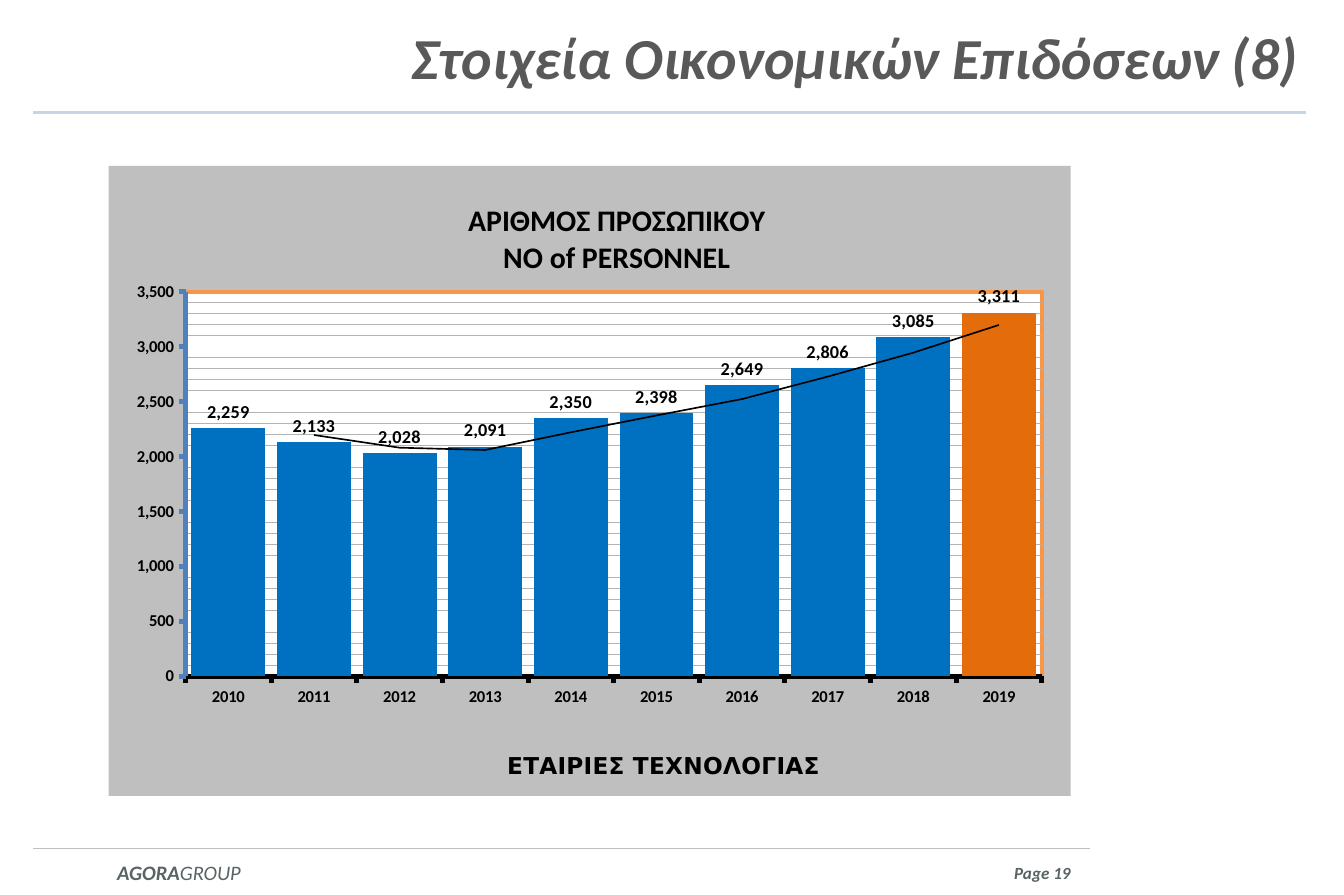
from lxml import etree
from pptx import Presentation
from pptx.chart.data import CategoryChartData
from pptx.dml.color import RGBColor
from pptx.enum.chart import XL_CHART_TYPE, XL_LABEL_POSITION, XL_TICK_MARK
from pptx.enum.shapes import MSO_CONNECTOR
from pptx.enum.text import MSO_ANCHOR, PP_ALIGN
from pptx.oxml import parse_xml
from pptx.oxml.ns import nsdecls, qn
from pptx.util import Inches, Pt

BLACK = RGBColor(0x00, 0x00, 0x00)
WHITE = RGBColor(0xFF, 0xFF, 0xFF)
TITLE_GRAY = RGBColor(0x59, 0x59, 0x59)
FOOTER_GRAY = RGBColor(0x58, 0x64, 0x64)
HEADER_RULE = RGBColor(0xC6, 0xD5, 0xE4)
FOOTER_RULE = RGBColor(0xC0, 0xC0, 0xC2)
PANEL_GRAY = RGBColor(0xBF, 0xBF, 0xBF)
GRID_GRAY = RGBColor(0xB3, 0xB3, 0xB3)
BAR_BLUE = RGBColor(0x00, 0x70, 0xC0)
BAR_ORANGE = RGBColor(0xE4, 0x6C, 0x0A)
AXIS_BLUE = RGBColor(0x4F, 0x81, 0xBD)
PLOT_BORDER = RGBColor(0xF7, 0x96, 0x46)

PERSONNEL = {
    "2010": 2259, "2011": 2133, "2012": 2028, "2013": 2091, "2014": 2350,
    "2015": 2398, "2016": 2649, "2017": 2806, "2018": 3085, "2019": 3311,
}


def style_font(font, size, color, name="Calibri", bold=True, italic=False):
    font.name = name
    font.size = Pt(size)
    font.bold = bold
    font.italic = italic
    font.color.rgb = color


def add_rule(slide, left, right, y, color, width):
    line = slide.shapes.add_connector(
        MSO_CONNECTOR.STRAIGHT, Inches(left), Inches(y), Inches(right), Inches(y))
    line.line.color.rgb = color
    line.line.width = Pt(width)
    etree.SubElement(line._element.spPr, qn("a:effectLst"))


def add_text(slide, box, runs, size, color, align, inset=(0, 0)):
    """Add one italic line; runs are (text, bold) pairs."""
    sp = slide.shapes.add_textbox(*map(Inches, box))
    tf = sp.text_frame
    tf.word_wrap = True
    tf.vertical_anchor = MSO_ANCHOR.MIDDLE
    tf.margin_left = tf.margin_right = Inches(inset[0])
    tf.margin_top = tf.margin_bottom = Inches(inset[1])
    p = tf.paragraphs[0]
    p.alignment = align
    for text, bold in runs:
        r = p.add_run()
        r.text = text
        style_font(r.font, size, color, bold=bold, italic=True)


def set_layout(parent, index, x, y, size=None):
    """Place a chart part by fractions of the chart; size marks the inner plot."""
    old = parent.find(qn("c:layout"))
    if old is not None:
        parent.remove(old)
    values = {"xMode": "edge", "yMode": "edge", "x": x, "y": y}
    if size:
        values = {"layoutTarget": "inner", **values, "w": size[0], "h": size[1]}
    layout = etree.Element(qn("c:layout"))
    manual = etree.SubElement(layout, qn("c:manualLayout"))
    for tag, value in values.items():
        etree.SubElement(manual, qn(f"c:{tag}")).set("val", str(value))
    parent.insert(index, layout)


def chart_format(fill=None, line=None, width=0.75):
    """Return the spPr of a chart part; a missing colour means none."""
    def paint(color):
        if color is None:
            return "<a:noFill/>"
        return f'<a:solidFill><a:srgbClr val="{color}"/></a:solidFill>'

    return parse_xml(f'<c:spPr {nsdecls("c", "a")}>{paint(fill)}'
                     f'<a:ln w="{Pt(width)}">{paint(line)}</a:ln></c:spPr>')


def add_moving_average(series):
    trend = parse_xml(
        f'<c:trendline {nsdecls("c")}><c:trendlineType val="movingAvg"/>'
        '<c:period val="2"/><c:dispRSqr val="0"/><c:dispEq val="0"/></c:trendline>')
    trend.insert(0, chart_format(line=BLACK, width=1))
    series._element.find(qn("c:cat")).addprevious(trend)


def set_title(title, lines, size, font_name, x, y):
    tf = title.text_frame
    tf.text = "\n".join(lines)
    for p in tf.paragraphs:
        p.alignment = PP_ALIGN.CENTER
        style_font(p.font, size, BLACK, font_name)
    set_layout(title._element, 1, x, y)


def style_axis(axis, color):
    axis.major_tick_mark = XL_TICK_MARK.OUTSIDE
    axis.minor_tick_mark = XL_TICK_MARK.NONE
    axis.has_major_gridlines = False
    axis.format.line.color.rgb = color
    axis.format.line.width = Pt(3)
    style_font(axis.tick_labels.font, 10, BLACK)


def style_series(plot):
    plot.gap_width = 16
    plot.vary_by_categories = False
    series = plot.series[0]
    series.format.fill.solid()
    series.format.fill.fore_color.rgb = BAR_BLUE
    latest = series.points[len(PERSONNEL) - 1].format.fill
    latest.solid()
    latest.fore_color.rgb = BAR_ORANGE
    labels = series.data_labels
    labels.show_value = True
    labels.position = XL_LABEL_POSITION.OUTSIDE_END
    labels.number_format = "#,##0"
    labels.number_format_is_linked = False
    style_font(labels.font, 11, BLACK)
    add_moving_average(series)


def add_personnel_chart(slide):
    data = CategoryChartData(number_format="#,##0")
    data.categories = list(PERSONNEL)
    data.add_series("Series 1", list(PERSONNEL.values()))
    chart = slide.shapes.add_chart(
        XL_CHART_TYPE.COLUMN_CLUSTERED, Inches(0.91), Inches(1.39),
        Inches(8.06), Inches(5.28), data).chart
    style_font(chart.font, 10, BLACK, bold=False)
    chart.has_legend = False
    chart.has_title = True
    set_title(chart.chart_title, ["ΑΡΙΘΜΟΣ ΠΡΟΣΩΠΙΚΟΥ", "NO of PERSONNEL"],
              18, "Calibri", 0.37, 0.05)

    years, counts = chart.category_axis, chart.value_axis
    style_axis(years, BLACK)
    set_title(years.axis_title, ["ΕΤΑΙΡΙΕΣ ΤΕΧΝΟΛΟΓΙΑΣ"], 14, "DejaVu Sans", 0.41, 0.92)
    style_axis(counts, AXIS_BLUE)
    counts.minimum_scale, counts.maximum_scale = 0, 3500
    counts.major_unit, counts.minor_unit = 500, 100
    counts.has_minor_gridlines = True
    counts._element.find(qn("c:minorGridlines")).append(chart_format(line=GRID_GRAY))
    counts.tick_labels.number_format = "#,##0"
    counts.tick_labels.number_format_is_linked = False
    style_series(chart.plots[0])

    chart_part = chart._chartSpace.find(qn("c:chart"))
    chart_part.addnext(chart_format(PANEL_GRAY))
    plot_area = chart_part.find(qn("c:plotArea"))
    plot_area.append(chart_format(WHITE, PLOT_BORDER, 2.25))
    set_layout(plot_area, 0, 0.08, 0.2, (0.89, 0.61))


def main():
    prs = Presentation()
    prs.slide_width, prs.slide_height = Inches(11.26), Inches(7.5)
    slide = prs.slides.add_slide(prs.slide_layouts[6])
    add_rule(slide, 0.28, 10.94, 0.94, HEADER_RULE, 1.75)
    add_rule(slide, 0.28, 9.13, 7.11, FOOTER_RULE, 1)
    add_text(slide, (0.28, 7.17, 2.44, 0.28), [("AGORA", True), ("GROUP", False)],
             12.4, FOOTER_GRAY, PP_ALIGN.CENTER)
    add_text(slide, (8.03, 7.17, 0.94, 0.28), [("Page 19", True)],
             10.3, FOOTER_GRAY, PP_ALIGN.RIGHT)
    add_text(slide, (0.28, 0, 10.67, 0.94), [("Στοιχεία Οικονομικών Επιδόσεων (8)", True)],
             35, TITLE_GRAY, PP_ALIGN.RIGHT, (0.07, 0.04))
    add_personnel_chart(slide)
    prs.save("out.pptx")


if __name__ == "__main__":
    main()
